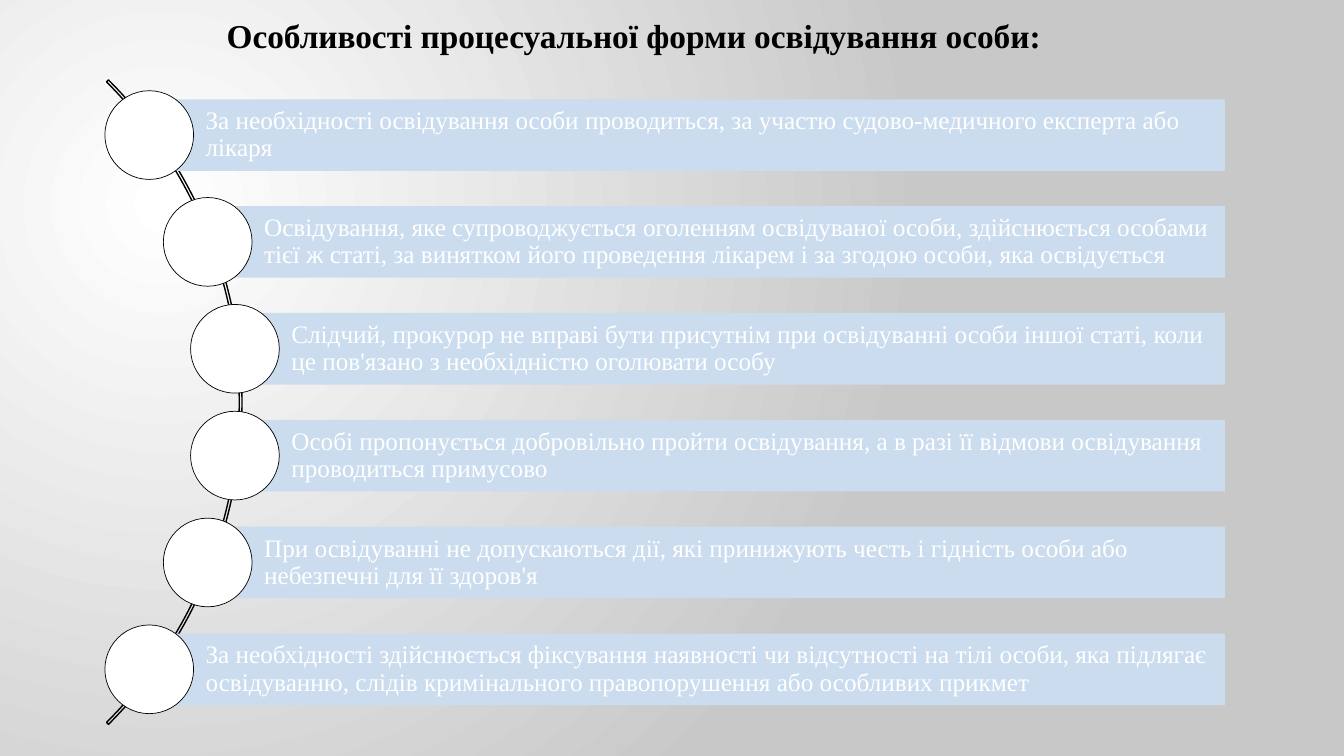
from lxml import etree
from pptx import Presentation, util as u
from pptx.dml.color import RGBColor
from pptx.enum import shapes, text
from pptx.oxml.ns import qn

TITLE = "Особливості процесуальної форми освідування особи:"
FEATURES = [
    "За необхідності освідування особи проводиться, за участю судово-медичного експерта або лікаря",
    "Освідування, яке супроводжується оголенням освідуваної особи, здійснюється особами тієї ж статі, "
    "за винятком його проведення лікарем і за згодою особи, яка освідується",
    "Слідчий, прокурор не вправі бути присутнім при освідуванні особи іншої статі, "
    "коли це пов'язано з необхідністю оголювати особу",
    "Особі пропонується добровільно пройти освідування, а в разі її відмови освідування "
    "проводиться примусово",
    "При освідуванні не допускаються дії, які принижують честь і гідність особи або "
    "небезпечні для її здоров'я",
    "За необхідності здійснюється фіксування наявності чи відсутності на тілі особи, яка підлягає "
    "освідуванню, слідів кримінального правопорушення або особливих прикмет",
]


def rgb(value):
    """Turn a hex string into a colour."""
    return RGBColor.from_string(value)


class Deck:
    """Hold the slide style and draw each kind of element."""

    font = "Times New Roman"
    black, white, bar_fill = "000000", "FFFFFF", "CADCEE"

    def __init__(self, prs):
        """Add a blank slide to the presentation."""
        self.s = prs.slides.add_slide(prs.slide_layouts[6])

    def background(self, colors, focus):
        """Fill the slide with a circular gradient around a focus."""
        fill = self.s.background.fill
        fill.gradient()
        for stop, color in zip(fill.gradient_stops, colors):
            stop.color.rgb = rgb(color)
        lin = next(self.s.element.iter(qn("a:lin")))
        circle = etree.Element(qn("a:path"), {"path": "circle"})
        etree.SubElement(circle, qn("a:fillToRect"),
                         {side: str(pct * 1000) for side, pct in focus.items()})
        lin.getparent().replace(lin, circle)

    def paragraph(self, sp, content, frame, font, color, space_before=0):
        """Put one left-aligned paragraph into a shape."""
        tf = sp.text_frame
        for name, value in {"word_wrap": True, **frame}.items():
            setattr(tf, name, value)
        p = tf.paragraphs[0]
        for name, value in {"alignment": text.PP_ALIGN.LEFT, "line_spacing": 0.9,
                            "space_before": u.Pt(space_before)}.items():
            setattr(p, name, value)
        r = p.add_run()
        r.text = content
        for name, value in {"name": self.font, **font}.items():
            setattr(r.font, name, value)
        r.font.color.rgb = rgb(color)

    def title(self, content, *box):
        """Add the bold heading."""
        sp = self.s.shapes.add_textbox(*map(u.Inches, box))
        self.paragraph(sp, content, {"vertical_anchor": text.MSO_ANCHOR.TOP},
                       {"size": u.Pt(23.8), "bold": True}, self.black, 10)

    def shape(self, kind, box, fill=None, line=0):
        """Add a preset shape with an optional fill and black outline."""
        sp = self.s.shapes.add_shape(kind, *map(u.Inches, box))
        sp.shadow.inherit = False
        if fill:
            sp.fill.solid()
            sp.fill.fore_color.rgb = rgb(fill)
        else:
            sp.fill.background()
        if line:
            sp.line.color.rgb = rgb(self.black)
            sp.line.width = u.Pt(line)
        else:
            sp.line.fill.background()
        return sp

    def arc(self, cx, cy, radius):
        """Add the thin right-hand arc."""
        box = (cx - radius, cy - radius, 2 * radius, 2 * radius)
        sp = self.shape(shapes.MSO_SHAPE.BLOCK_ARC, box, line=1)
        for i, value in enumerate((189, 27, 0.003)):
            sp.adjustments[i] = value

    def feature(self, content, cx, cy, right=12.15, height=0.71, size=0.88):
        """Add a text bar with a circle centred on its left edge."""
        sp = self.shape(shapes.MSO_SHAPE.RECTANGLE,
                        (cx, cy - height / 2, right - cx, height), self.bar_fill)
        frame = {"margin_left": u.Inches(0.56), "vertical_anchor": text.MSO_ANCHOR.MIDDLE}
        for side in ("top", "right", "bottom"):
            frame[f"margin_{side}"] = u.Inches(0.05)
        self.paragraph(sp, content, frame, {"size": u.Pt(18)}, self.white)
        self.shape(shapes.MSO_SHAPE.OVAL,
                   (cx - size / 2, cy - size / 2, size, size), self.white, 0.5)


def main():
    """Build and save the slide."""
    prs = Presentation()
    prs.slide_width, prs.slide_height = u.Inches(13.33), u.Inches(7.5)
    deck = Deck(prs)
    deck.background(("FFFFFF", "C8C8C8"), {"l": 50, "t": 55, "r": 125, "b": 100})
    deck.title(TITLE, 2.15, 0.15, 8.89, 0.73)
    deck.arc(-2.12, 3.99, 4.52)
    centres = (1.48, 2.06, 2.33)
    for i, (content, cx) in enumerate(zip(FEATURES, centres + centres[::-1])):
        deck.feature(content, cx, 1.34 + 1.06 * i)
    prs.save("out.pptx")


if __name__ == "__main__":
    main()
